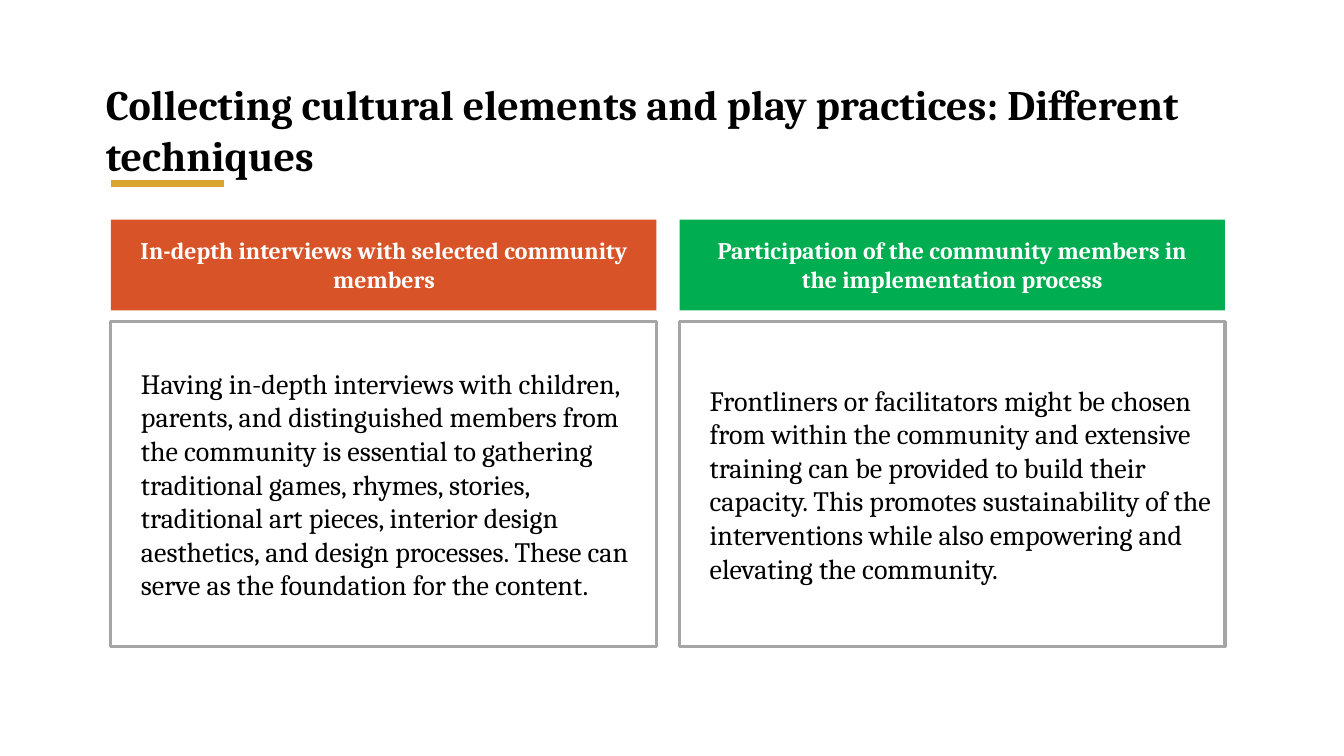
from pptx import Presentation
from pptx.dml.color import RGBColor
from pptx.enum.shapes import MSO_CONNECTOR, MSO_SHAPE
from pptx.enum.text import MSO_ANCHOR, MSO_AUTO_SIZE, PP_ALIGN
from pptx.oxml.ns import qn
from pptx.util import Inches, Pt
from lxml.etree import SubElement

COLORS = {
    "text": "000000",
    "light": "FFFFFF",
    "orange": "D85327",
    "green": "00AD50",
    "border": "A5A5A5",
    "accent": "DAA530",
}
TITLE = "Collecting cultural elements and play practices: Different techniques"
TECHNIQUES = [
    (
        "orange",
        "In-depth interviews with selected community members",
        (0.09, 5.24),
        "Having in-depth interviews with children, parents, and distinguished "
        "members from the community is essential to gathering traditional games, "
        "rhymes, stories, traditional art pieces, interior design aesthetics, and "
        "design processes. These can serve as the foundation for the content.",
    ),
    (
        "green",
        "Participation of the community members in the implementation process",
        (0.14, 5.13),
        "Frontliners or facilitators might be chosen from within the community and "
        "extensive training can be provided to build their capacity. This promotes "
        "sustainability of the interventions while also empowering and elevating "
        "the community.",
    ),
]
LEFT, CARD_WIDTH, CARD_STEP = 1.1, 5.41, 5.64


def color(name):
    return RGBColor.from_string(COLORS[name])


def write(frame, text, *, size, ink="text", bold=False, font="Cambria",
          align=PP_ALIGN.LEFT, anchor=MSO_ANCHOR.TOP, indent=0):
    frame.word_wrap = True
    frame.auto_size = MSO_AUTO_SIZE.NONE
    frame.vertical_anchor = anchor
    para = frame.paragraphs[0]
    para.alignment = align
    if indent:
        properties = para._p.get_or_add_pPr()
        properties.set("marL", str(Inches(indent)))
        properties.set("indent", "0")
    span = para.add_run()
    span.text = text
    span.font.name = font
    span.font.size = Pt(size)
    span.font.bold = bold
    span.font.color.rgb = color(ink)


class TechniquePage:
    """Draws styled elements on the current slide."""

    def __init__(self, deck):
        self.page = deck.slides.add_slide(deck.slide_layouts[5])

    def title(self, text, *place):
        box = self.page.shapes.title
        box.left, box.top, box.width, box.height = map(Inches, place)
        write(box.text_frame, text, size=30, bold=True)

    def panel(self, *place, fill=None, line=None):
        box = self.page.shapes.add_shape(MSO_SHAPE.RECTANGLE, *map(Inches, place))
        box.shadow.inherit = False
        if fill:
            box.fill.solid()
            box.fill.fore_color.rgb = color(fill)
        else:
            box.fill.background()
        if line:
            box.line.color.rgb = color(line)
            box.line.width = Pt(2.25)
        else:
            box.line.fill.background()
        return box

    def heading(self, text, *place):
        box = self.page.shapes.add_textbox(*map(Inches, place))
        write(box.text_frame, text, size=17, ink="light", bold=True,
              align=PP_ALIGN.CENTER)

    def rule(self, *ends):
        line = self.page.shapes.add_connector(MSO_CONNECTOR.STRAIGHT, *map(Inches, ends))
        line.line.color.rgb = color("accent")
        line.line.width = Pt(4.5)
        SubElement(line._element.spPr, qn("a:effectLst"))


def main():
    deck = Presentation()
    deck.slide_width, deck.slide_height = Inches(13.33), Inches(7.5)
    slide = TechniquePage(deck)
    slide.title(TITLE, 0.95, 0.73, 11.39, 1.11)
    for index, (fill, heading, (inset, width), body) in enumerate(TECHNIQUES):
        left = LEFT + index * CARD_STEP
        slide.panel(left, 2.18, CARD_WIDTH, 0.9, fill=fill)
        slide.heading(heading, left + inset, 2.29, width, 0.67)
        card = slide.panel(left, 3.19, CARD_WIDTH, 3.22, line="border")
        write(card.text_frame, body, size=20, anchor=MSO_ANCHOR.MIDDLE, indent=0.2)
    slide.rule(LEFT, 1.82, 2.22, 1.82)
    deck.save("out.pptx")


if __name__ == "__main__":
    main()
